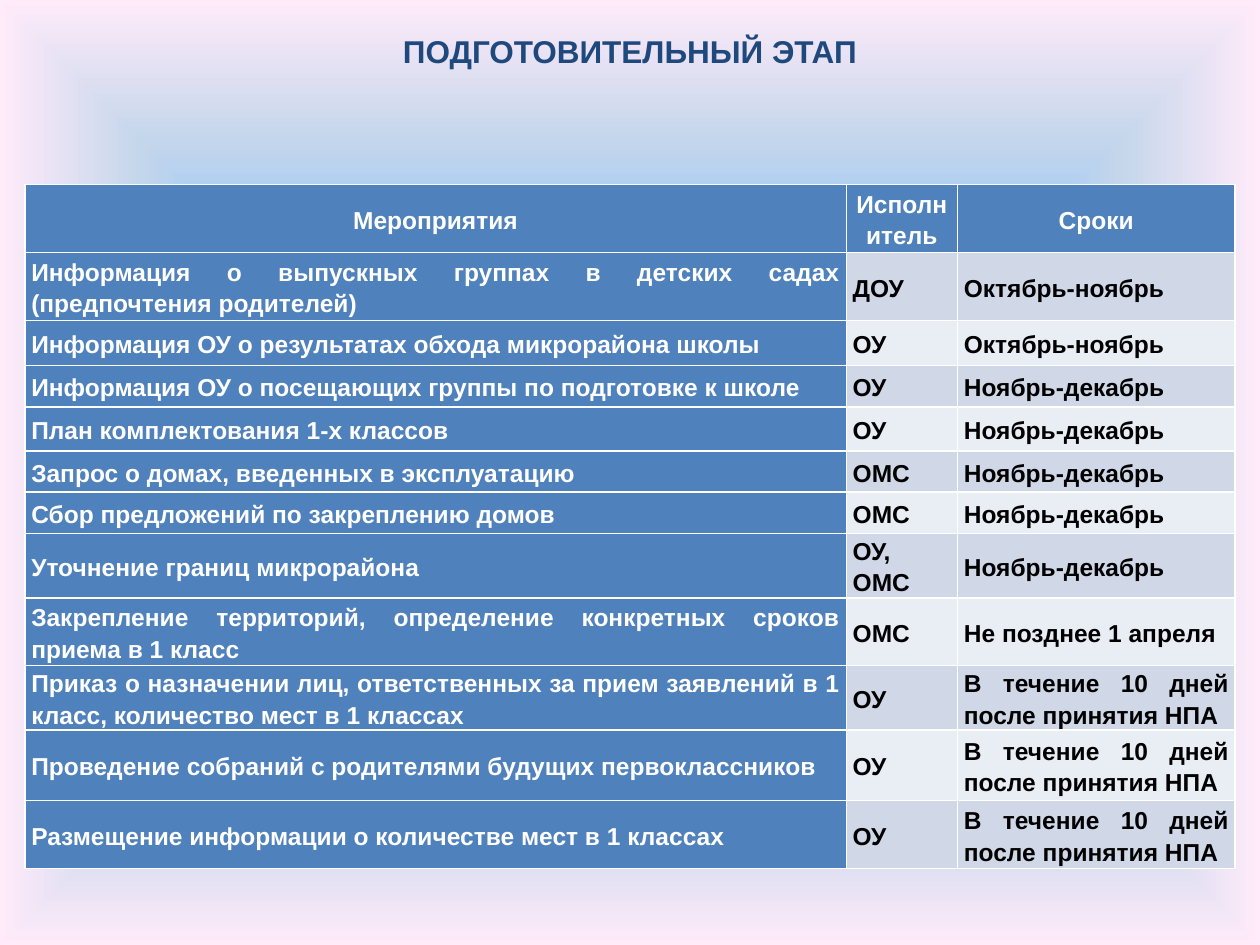
import pptx
import pptx.util
import pptx.dml.color
import pptx.enum.text
import pptx.oxml
import pptx.oxml.ns
from dataclasses import dataclass
from pptx.util import Cm


@dataclass(frozen=True)
class Theme:
    font: str = "Arial"
    title_size: int = 18
    table_size: int = 14
    title: str = "1F497D"
    accent: str = "4F81BD"
    bands: tuple = ("D0D8E8", "E9EDF4")
    light: str = "FFFFFF"
    dark: str = "000000"
    background: tuple = ((0, "5E9EFF"), (40, "85C2FF"), (70, "C4D6EB"), (100, "FFEBFA"))


THEME = Theme()
NS = pptx.oxml.ns.nsdecls("a")
ALIGN = pptx.enum.text.PP_ALIGN


def add_text(p, text, size, color, align):
    p.alignment = align
    r = p.add_run()
    r.text = text
    r.font.name = THEME.font
    r.font.size = pptx.util.Pt(size)
    r.font.bold = True
    r.font.color.rgb = pptx.dml.color.RGBColor.from_string(color)


def style_cell(cell, fill):
    """Set margins, anchor, fill and thin white borders."""
    cell.margin_left = cell.margin_right = Cm(0.13)
    cell.margin_top = cell.margin_bottom = 0
    cell.vertical_anchor = pptx.enum.text.MSO_ANCHOR.MIDDLE
    cell.fill.solid()
    cell.fill.fore_color.rgb = pptx.dml.color.RGBColor.from_string(fill)
    tcPr = cell._tc.get_or_add_tcPr()
    for i, side in enumerate("LRTB"):
        tcPr.insert(i, pptx.oxml.parse_xml(
            f'<a:ln{side} {NS} w="12700"><a:solidFill>'
            f'<a:srgbClr val="{THEME.light}"/></a:solidFill></a:ln{side}>'))


prs = pptx.Presentation()
prs.slide_width, prs.slide_height = Cm(25.4), Cm(19.05)
s = prs.slides.add_slide(prs.slide_layouts[6])

# Background: gradient spreading from the centre
s.background.fill.gradient()
grad = s.background._cSld.find(".//" + pptx.oxml.ns.qn("a:gradFill"))
for child in list(grad):
    grad.remove(child)
stops = "".join(f'<a:gs pos="{pos * 1000}"><a:srgbClr val="{color}"/></a:gs>'
                for pos, color in THEME.background)
grad.append(pptx.oxml.parse_xml(f"<a:gsLst {NS}>{stops}</a:gsLst>"))
grad.append(pptx.oxml.parse_xml(
    f'<a:path {NS} path="shape">'
    '<a:fillToRect l="50000" t="50000" r="50000" b="50000"/></a:path>'))

# Schedule table: row height in cm, then the cell texts
AUTUMN, WINTER = "Октябрь-ноябрь", "Ноябрь-декабрь"
AFTER_ACT = "В течение 10 дней после принятия НПА"
rows = [
    (1.37, "Мероприятия", "Исполнитель", "Сроки"),
    (1.37, "Информация о выпускных группах в детских садах (предпочтения родителей)",
     "ДОУ", AUTUMN),
    (0.91, "Информация ОУ о результатах обхода микрорайона школы", "ОУ", AUTUMN),
    (0.83, "Информация ОУ о посещающих группы по подготовке к школе", "ОУ", WINTER),
    (0.89, "План комплектования 1-х классов", "ОУ", WINTER),
    (0.83, "Запрос о домах, введенных в эксплуатацию", "ОМС", WINTER),
    (0.83, "Сбор предложений по закреплению домов", "ОМС", WINTER),
    (1.3, "Уточнение границ микрорайона", "ОУ, ОМС", WINTER),
    (1.37, "Закрепление территорий, определение конкретных сроков приема в 1 класс",
     "ОМС", "Не позднее 1 апреля"),
    (1.3, "Приказ о назначении лиц, ответственных за прием заявлений в 1 класс, "
     "количество мест в 1 классах", "ОУ", AFTER_ACT),
    (1.42, "Проведение собраний с родителями будущих первоклассников", "ОУ", AFTER_ACT),
    (1.37, "Размещение информации о количестве мест в 1 классах", "ОУ", AFTER_ACT),
]
widths = (16.56, 2.24, 5.6)
height = sum(row[0] for row in rows)
table = s.shapes.add_table(len(rows), len(widths), Cm(0.5), Cm(3.72),
                           Cm(sum(widths)), Cm(height)).table
for column, width in zip(table.columns, widths):
    column.width = Cm(width)
for i, (row_height, *texts) in enumerate(rows):
    table.rows[i].height = Cm(row_height)
    for j, text in enumerate(texts):
        cell = table.cell(i, j)
        heading = i == 0 or j == 0
        style_cell(cell, THEME.accent if heading else THEME.bands[(i - 1) % 2])
        p = cell.text_frame.paragraphs[0]
        p.line_spacing = 1.15
        add_text(p, text, THEME.table_size, THEME.light if heading else THEME.dark,
                 ALIGN.CENTER if i == 0 else ALIGN.JUSTIFY)

# Title
tf = s.shapes.add_textbox(0, Cm(0.53), prs.slide_width, Cm(1.02)).text_frame
tf.word_wrap = True
tf.auto_size = pptx.enum.text.MSO_AUTO_SIZE.SHAPE_TO_FIT_TEXT
add_text(tf.paragraphs[0], "ПОДГОТОВИТЕЛЬНЫЙ ЭТАП", THEME.title_size, THEME.title,
         ALIGN.CENTER)

prs.save("out.pptx")
